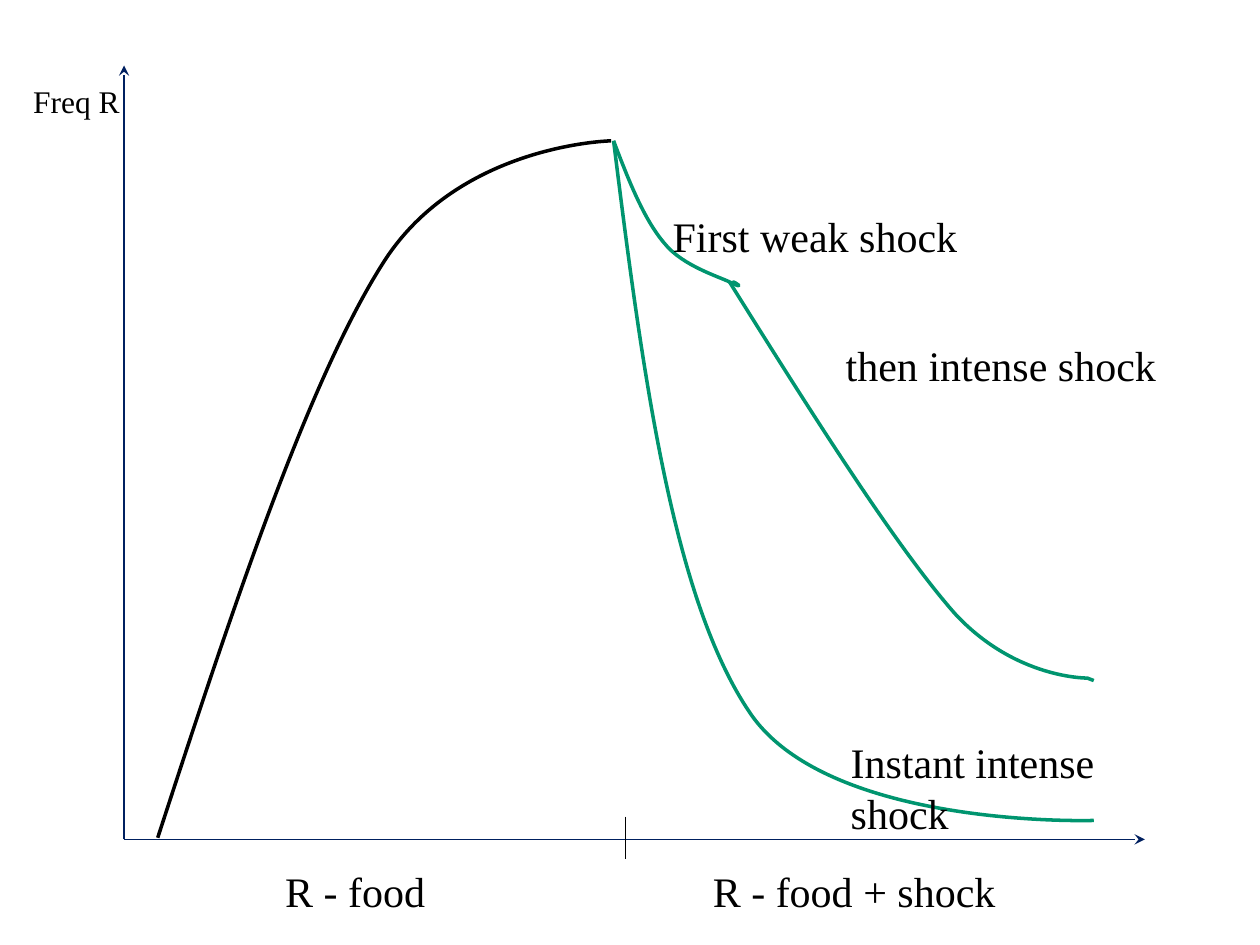
from lxml import etree
from pptx import Presentation
from pptx import util as u
from pptx.dml.color import RGBColor
from pptx.enum import shapes
from pptx.oxml.ns import qn

BLACK = RGBColor(0x00, 0x00, 0x00)
NAVY = RGBColor(0x00, 0x20, 0x60)
GREEN = RGBColor(0x00, 0x95, 0x6F)
FONT = "Times New Roman"

# Axes and phase divider, in cm: start, end, colour, arrowhead
ORIGIN = (2.5, 16.92)
LINES = [
    (ORIGIN, (2.5, 1.32), NAVY, True),
    (ORIGIN, (23.08, 16.92), NAVY, True),
    ((12.61, 16.46), (12.61, 17.32), BLACK, False),
]

# Response curves, in cm: colour, start, segments
# A segment of three points is a cubic curve, of one point a straight line
PEAK = (12.37, 2.84)
CURVES = [
    # Food only
    (BLACK, (3.18, 16.89), [
        ((4.7, 12.22), (6.25, 7.57), (7.77, 5.23)),
        ((9.3, 2.9), (12.32, 2.84), (12.32, 2.84))]),
    # Instant intense shock
    (GREEN, PEAK, [
        ((12.95, 7.49), (13.56, 12.14), (15.16, 14.43)),
        ((16.79, 16.71), (22.05, 16.54), (22.05, 16.54))]),
    # Intense shock after the weak one
    (GREEN, (14.71, 5.69), [
        ((16.38, 8.36), (18.06, 11.02), (19.25, 12.37)),
        ((20.47, 13.69), (21.92, 13.67), (21.92, 13.67)),
        ((22.05, 13.72),)]),
    # First weak shock
    (GREEN, PEAK, [
        ((12.67, 3.63), (12.98, 4.42), (13.39, 4.9)),
        ((13.77, 5.38), (14.55, 5.59), (14.78, 5.72)),
        ((15.04, 5.84), (14.78, 5.66), (14.78, 5.69)),
        ((14.81, 5.69), (14.83, 5.72), (14.86, 5.74))]),
]

# Labels: text, left, top, width, height in cm, size in points
LABELS = [
    ("Freq R", 0.42, 1.52, 2.29, 1.02, 18),
    ("R - food + shock", 14.12, 17.32, 7.44, 1.3, 24),
    ("R - food", 5.5, 17.32, 4.55, 1.3, 24),
    ("Instant intense shock", 16.9, 14.73, 7.49, 1.3, 24),
    ("then intense shock", 16.8, 6.72, 7.95, 1.3, 24),
    ("First weak shock", 13.31, 4.11, 7.29, 1.3, 24),
]


def add_line(slide, start, end, color, arrow):
    cx = slide.shapes.add_connector(
        shapes.MSO_CONNECTOR.STRAIGHT, *(u.Cm(v) for v in start + end))
    cx.line.color.rgb = color
    cx.line.width = u.Pt(0.75)
    if arrow:
        ln = cx.line._get_or_add_ln()
        etree.SubElement(ln, qn("a:tailEnd"), type="stealth")
    etree.SubElement(cx._element.spPr, qn("a:effectLst"))


def add_curve(slide, color, start, segments):
    fb = slide.shapes.build_freeform(*(u.Cm(v) for v in start))
    fb.add_line_segments(
        [(u.Cm(x), u.Cm(y)) for seg in segments for x, y in seg], close=False)
    sp = fb.convert_to_shape()
    # Merge each three straight steps into one cubic segment
    steps = iter(list(sp._element.iter(qn("a:lnTo"))))
    for seg in segments:
        first, *rest = [next(steps) for _ in seg]
        if rest:
            first.tag = qn("a:cubicBezTo")
        for step in rest:
            first.append(step[0])
            step.getparent().remove(step)
    sp.shadow.inherit = False
    sp.fill.background()
    sp.line.color.rgb = color
    sp.line.width = u.Pt(2)


def add_label(slide, label, left, top, width, height, size):
    box = slide.shapes.add_textbox(*(u.Cm(v) for v in (left, top, width, height)))
    tf = box.text_frame
    tf.word_wrap = True
    p = tf.paragraphs[0]
    p.text = label
    p.font.name = FONT
    p.font.size = u.Pt(size)
    p.font.color.rgb = BLACK


def main():
    prs = Presentation()
    prs.slide_width, prs.slide_height = u.Cm(25.4), u.Cm(19.05)
    slide = prs.slides.add_slide(prs.slide_layouts[6])
    for line in LINES:
        add_line(slide, *line)
    for curve in CURVES:
        add_curve(slide, *curve)
    for label in LABELS:
        add_label(slide, *label)
    prs.save("out.pptx")


if __name__ == "__main__":
    main()
